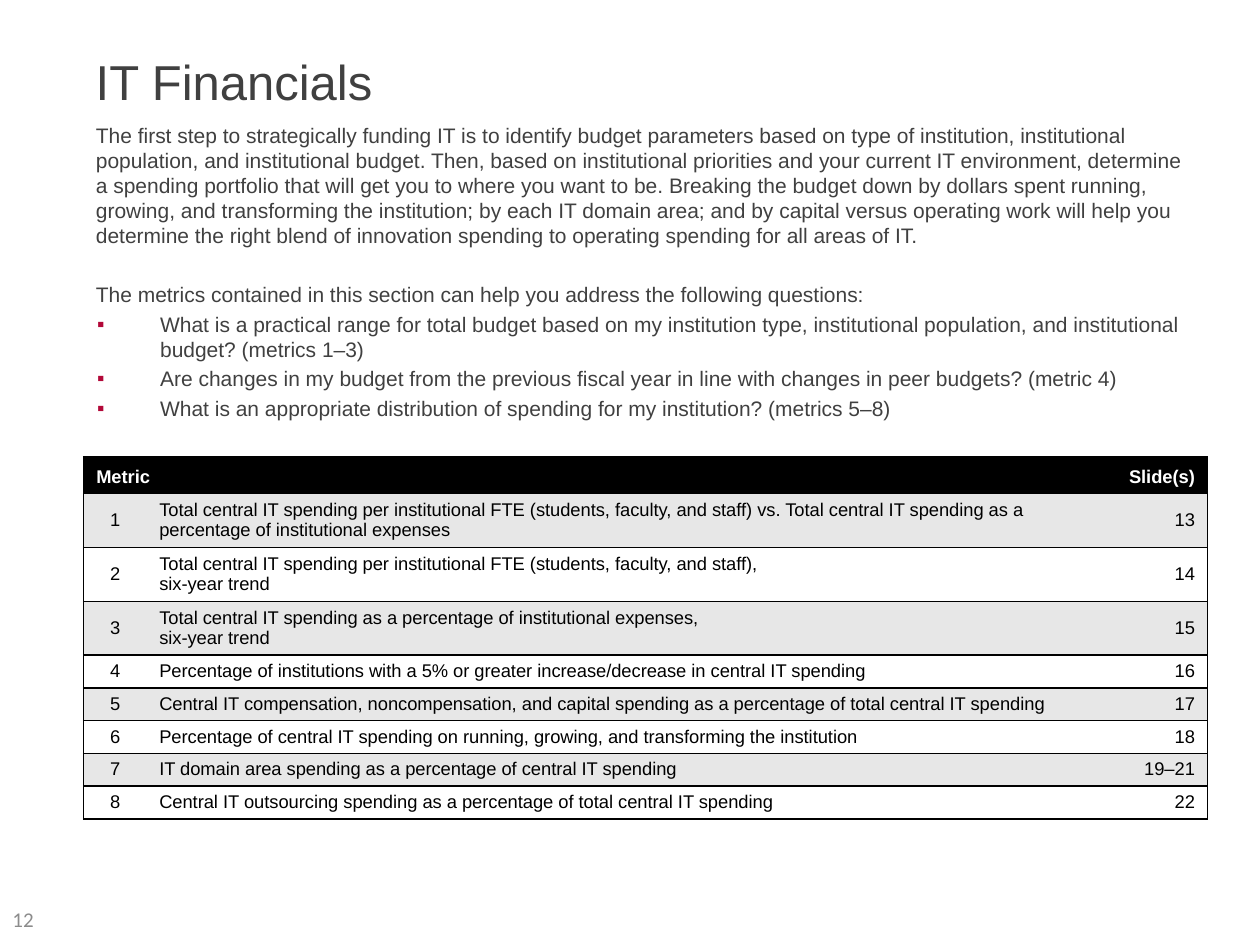
from dataclasses import dataclass
from typing import Optional

from lxml import etree
from pptx import Presentation
from pptx import util as u
from pptx.dml.color import RGBColor
from pptx.enum import text
from pptx.oxml import ns

SLIDE_W, SLIDE_H = u.Inches(10), u.Inches(7.5)
BLACK = RGBColor(0x00, 0x00, 0x00)
WHITE = RGBColor(0xFF, 0xFF, 0xFF)
BAND = RGBColor(0xE7, 0xE7, 0xE7)
BODY = RGBColor(0x40, 0x40, 0x40)
ACCENT = RGBColor(0xB2, 0x08, 0x38)
MUTED = RGBColor(0x8C, 0x8C, 0x8C)
LEFT, CENTER, RIGHT = text.PP_ALIGN.LEFT, text.PP_ALIGN.CENTER, text.PP_ALIGN.RIGHT


@dataclass(frozen=True)
class Area:
    left: float
    top: float
    width: float
    height: float

    def place(self) -> tuple:
        return (int(self.left * SLIDE_W / 100), int(self.top * SLIDE_H / 100),
                int(self.width * SLIDE_W / 100), int(self.height * SLIDE_H / 100))


@dataclass(frozen=True)
class Style:
    size: float
    color: RGBColor
    font: str = "Arial"
    bold: bool = False


@dataclass(frozen=True)
class Passage:
    words: str
    before: float = 2.4
    bullet: bool = False


@dataclass(frozen=True)
class Metric:
    paragraphs: tuple
    slides: str
    height: float = 0.26


TITLE_AREA = Area(6.6, 4.93, 87.7, 10.67)
BODY_AREA = Area(6.63, 12.27, 88.4, 34.4)
NUMBER_AREA = Area(0, 94.45, 10.8, 5.6)
TABLE_AREA = Area(6.64, 48.35, 89.2, 38)
COLUMNS = (5, 76.7, 7.5)
HEADER_HEIGHT, TALL = 0.29, 0.42
CELL_PADDING = u.Pt(3.2)

TITLE_STYLE = Style(28, BODY)
BODY_STYLE = Style(12, BODY)
NUMBER_STYLE = Style(12, MUTED, "Calibri")
HEADER_STYLE = Style(10.5, WHITE, bold=True)
CELL_STYLE = Style(10.5, BLACK)

PASSAGES = (
    Passage("The first step to strategically funding IT is to identify budget parameters based on type of "
            "institution, institutional population, and institutional budget. Then, based on institutional "
            "priorities and your current IT environment, determine a spending portfolio that will get you to "
            "where you want to be. Breaking the budget down by dollars spent running, growing, and transforming "
            "the institution; by each IT domain area; and by capital versus operating work will help you "
            "determine the right blend of innovation spending to operating spending for all areas of IT.", 0),
    Passage("The metrics contained in this section can help you address the following questions:", 19.3),
    Passage("What is a practical range for total budget based on my institution type, institutional population, "
            "and institutional budget? (metrics 1–3)", bullet=True),
    Passage("Are changes in my budget from the previous fiscal year in line with changes in peer budgets? "
            "(metric 4)", bullet=True),
    Passage("What is an appropriate distribution of spending for my institution? (metrics 5–8)", bullet=True),
)
METRICS = (
    Metric(("Total central IT spending per institutional FTE (students, faculty, and staff) vs. "
            "Total central IT spending as a percentage of institutional expenses",), "13", TALL),
    Metric(("Total central IT spending per institutional FTE (students, faculty, and staff),",
            "six-year trend"), "14", TALL),
    Metric(("Total central IT spending as a percentage of institutional expenses,\nsix-year trend",), "15", TALL),
    Metric(("Percentage of institutions with a 5% or greater increase/decrease in central IT spending",), "16"),
    Metric(("Central IT compensation, noncompensation, and capital spending as a percentage of "
            "total central IT spending",), "17"),
    Metric(("Percentage of central IT spending on running, growing, and transforming the institution",), "18"),
    Metric(("IT domain area spending as a percentage of central IT spending",), "19–21"),
    Metric(("Central IT outsourcing spending as a percentage of total central IT spending",), "22"),
)


def write(para, words: str, style: Style, align=LEFT, spacing: float = 1.0) -> None:
    para.alignment = align
    para.line_spacing = spacing
    for index, line in enumerate(words.split("\n")):
        if index:
            para.add_line_break()
        span = para.add_run()
        span.text = line
        span.font.size = u.Pt(style.size)
        span.font.name = style.font
        span.font.bold = style.bold
        span.font.color.rgb = style.color


def add_bullet(para) -> None:
    props = para._p.get_or_add_pPr()
    props.set("marL", str(u.Inches(0.51)))
    props.set("indent", str(u.Inches(-0.5)))
    color = etree.SubElement(props, ns.qn("a:buClr"))
    etree.SubElement(color, ns.qn("a:srgbClr"), val=str(ACCENT))
    etree.SubElement(props, ns.qn("a:buFont"), typeface="Arial")
    etree.SubElement(props, ns.qn("a:buChar"), char="▪")


def add_box(page, area: Area, anchor):
    box = page.shapes.add_textbox(*area.place())
    box.text_frame.word_wrap = True
    box.text_frame.vertical_anchor = anchor
    return box.text_frame


def add_title(page) -> None:
    title = page.shapes.title
    title.left, title.top, title.width, title.height = TITLE_AREA.place()
    frame = title.text_frame
    frame.vertical_anchor = text.MSO_ANCHOR.TOP
    frame.margin_top = u.Inches(0.04)
    write(frame.paragraphs[0], "IT Financials", TITLE_STYLE)


def add_body(page) -> None:
    frame = add_box(page, BODY_AREA, text.MSO_ANCHOR.TOP)
    for index, passage in enumerate(PASSAGES):
        para = frame.add_paragraph() if index else frame.paragraphs[0]
        write(para, passage.words, BODY_STYLE)
        para.space_before = u.Pt(passage.before)
        if passage.bullet:
            add_bullet(para)


def set_borders(cell, visible: str) -> None:
    props = cell._tc.get_or_add_tcPr()
    for index, side in enumerate("LRTB"):
        line = etree.Element(ns.qn(f"a:ln{side}"), w=str(u.Pt(1)))
        if side in visible:
            fill = etree.SubElement(line, ns.qn("a:solidFill"))
            etree.SubElement(fill, ns.qn("a:srgbClr"), val=str(BLACK))
        else:
            etree.SubElement(line, ns.qn("a:noFill"))
        props.insert(index, line)


def fill_cell(cell, paragraphs: tuple, style: Style, align, color: RGBColor, anchor,
              side: Optional[str] = None) -> None:
    cell.fill.solid()
    cell.fill.fore_color.rgb = color
    cell.vertical_anchor = anchor
    cell.margin_top = cell.margin_bottom = CELL_PADDING
    set_borders(cell, "TB" + (side or ""))
    for index, words in enumerate(paragraphs):
        para = cell.text_frame.add_paragraph() if index else cell.text_frame.paragraphs[0]
        write(para, words, style, align, 0.97)


def add_metrics(page) -> None:
    table = page.shapes.add_table(len(METRICS) + 1, len(COLUMNS), *TABLE_AREA.place()).table
    table.horz_banding = False
    for column, share in zip(table.columns, COLUMNS):
        column.width = int(share * SLIDE_W / 100)
    heights = (HEADER_HEIGHT, *(metric.height for metric in METRICS))
    for row, height in zip(table.rows, heights):
        row.height = u.Inches(height)
    bottom, middle = text.MSO_ANCHOR.BOTTOM, text.MSO_ANCHOR.MIDDLE
    table.cell(0, 0).merge(table.cell(0, 1))
    fill_cell(table.cell(0, 0), ("Metric",), HEADER_STYLE, LEFT, BLACK, bottom, "L")
    fill_cell(table.cell(0, 2), ("Slide(s)",), HEADER_STYLE, RIGHT, BLACK, bottom, "R")
    for number, metric in enumerate(METRICS, 1):
        color = BAND if number % 2 else WHITE
        fill_cell(table.cell(number, 0), (str(number),), CELL_STYLE, CENTER, color, middle, "L")
        fill_cell(table.cell(number, 1), metric.paragraphs, CELL_STYLE, LEFT, color, middle)
        fill_cell(table.cell(number, 2), (metric.slides,), CELL_STYLE, RIGHT, color, middle, "R")


def main() -> None:
    deck = Presentation()
    deck.slide_width, deck.slide_height = SLIDE_W, SLIDE_H
    page = deck.slides.add_slide(deck.slide_layouts[5])
    add_title(page)
    add_body(page)
    number = add_box(page, NUMBER_AREA, text.MSO_ANCHOR.MIDDLE)
    write(number.paragraphs[0], "12", NUMBER_STYLE)
    add_metrics(page)
    deck.save("out.pptx")


if __name__ == "__main__":
    main()
